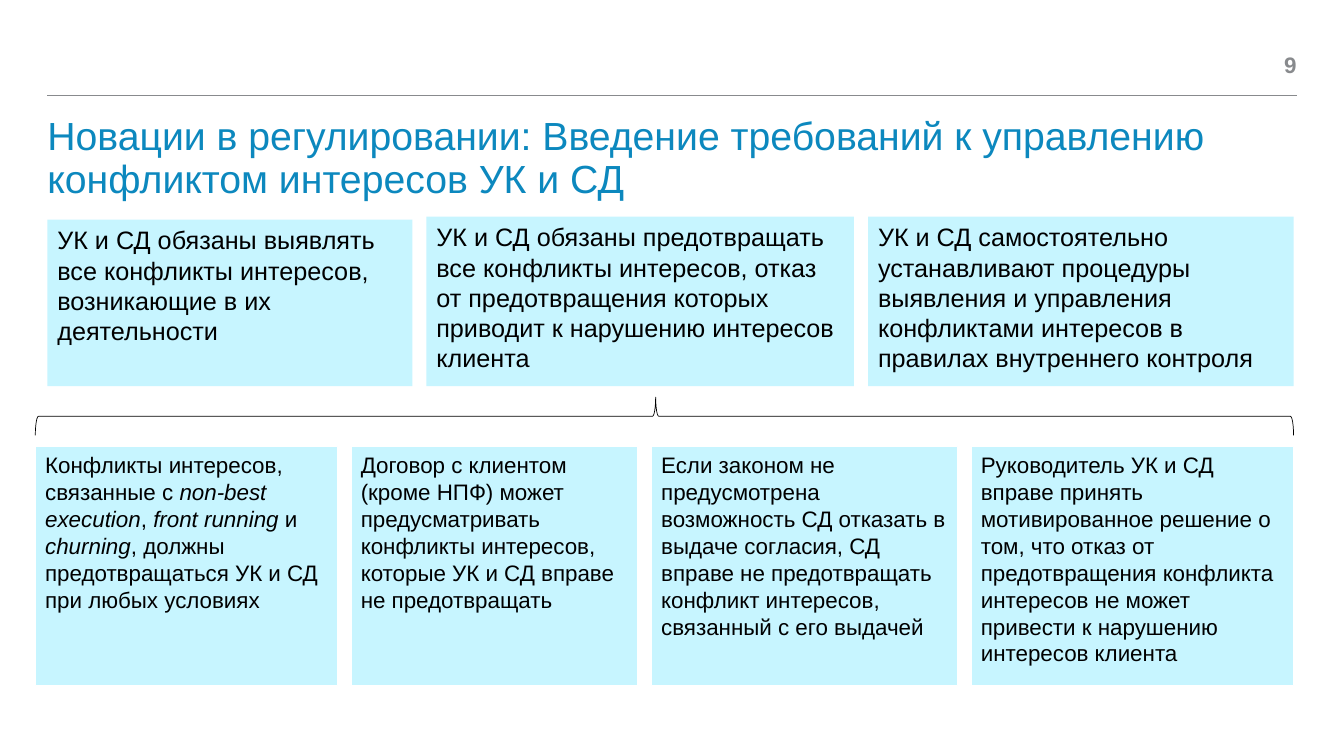
from lxml import etree
from pptx import Presentation
from pptx.dml.color import RGBColor
from pptx.enum.shapes import MSO_CONNECTOR, MSO_SHAPE
from pptx.enum.text import MSO_ANCHOR, PP_ALIGN
from pptx.oxml.ns import qn
from pptx.util import Inches, Pt

STRAIGHT = MSO_CONNECTOR.STRAIGHT
RECTANGLE, LEFT_BRACE = MSO_SHAPE.RECTANGLE, MSO_SHAPE.LEFT_BRACE
TOP, MIDDLE = MSO_ANCHOR.TOP, MSO_ANCHOR.MIDDLE
LEFT, RIGHT = PP_ALIGN.LEFT, PP_ALIGN.RIGHT

FONT = "Arial"
BLACK, WHITE, GRAY = "000000", "FFFFFF", "888A8D"
TITLE_BLUE, CARD_BLUE = "0C88BE", "C7F5FF"

TITLE = ("Новации в регулировании: Введение требований к управлению "
         "конфликтом интересов УК и СД")

# Each card: width, height, runs of (text, italic)
DUTIES = [
    (3.62, 1.65, [("УК и СД обязаны выявлять все конфликты интересов, "
                   "возникающие в их деятельности", False)]),
    (4.24, 1.68, [("УК и СД обязаны предотвращать все конфликты интересов, "
                   "отказ от предотвращения которых приводит к нарушению "
                   "интересов клиента", False)]),
    (4.22, 1.68, [("УК и СД самостоятельно устанавливают процедуры выявления "
                   "и управления конфликтами интересов в правилах "
                   "внутреннего контроля", False)]),
]
CONDITIONS = [
    (3.0, 2.37, [("Конфликты интересов, связанные с ", False),
                 ("non-best execution", True), (", ", False),
                 ("front running ", True), ("и ", False), ("churning", True),
                 (", должны предотвращаться УК и СД при любых условиях", False)]),
    (2.85, 2.37, [("Договор с клиентом (кроме НПФ) может предусматривать "
                   "конфликты интересов, которые УК и СД вправе "
                   "не предотвращать", False)]),
    (3.04, 2.37, [("Если законом не предусмотрена возможность СД отказать в "
                   "выдаче согласия, СД вправе не предотвращать конфликт "
                   "интересов, связанный с его выдачей", False)]),
    (3.2, 2.37, [("Руководитель УК и СД вправе принять мотивированное решение "
                  "о том, что отказ от предотвращения конфликта интересов не "
                  "может привести к нарушению интересов клиента", False)]),
]


def color(value):
    return RGBColor.from_string(value)


def write_runs(shape, runs, size, text_color, anchor=TOP, alignment=LEFT, bold=False):
    frame = shape.text_frame
    frame.word_wrap = True
    frame.vertical_anchor = anchor
    paragraph = frame.paragraphs[0]
    paragraph.alignment = alignment
    for text, italic in runs:
        run = paragraph.add_run()
        run.text = text
        run.font.name = FONT
        run.font.size = Pt(size)
        run.font.bold = bold
        run.font.italic = italic
        run.font.color.rgb = color(text_color)
    return paragraph


def add_label(slide, box, text, size, text_color, **style):
    """Add a text box without margins."""
    label = slide.shapes.add_textbox(*map(Inches, box))
    frame = label.text_frame
    frame.margin_left = frame.margin_right = 0
    frame.margin_top = frame.margin_bottom = 0
    return write_runs(label, [(text, False)], size, text_color, **style)


def add_header(slide, left, top, width):
    add_label(slide, (left + width - 0.81, top, 0.81, 0.35), "9", 16, GRAY,
              anchor=MIDDLE, alignment=RIGHT, bold=True)
    rule_top = Inches(top + 0.48)
    rule = slide.shapes.add_connector(
        STRAIGHT, Inches(left), rule_top, Inches(left + width), rule_top)
    rule.line.color.rgb = color(GRAY)
    rule.line.width = Pt(0.5)
    etree.SubElement(rule._element.spPr, qn("a:effectLst"))
    title = add_label(slide, (left, top + 0.69, width, 0.66), TITLE, 28, TITLE_BLUE)
    title.line_spacing = 0.9


def add_card_row(slide, left, bottom, gap, cards, size, outlined=False):
    """Place cards from left to right, all standing on the same bottom edge."""
    for width, height, runs in cards:
        card = slide.shapes.add_shape(
            RECTANGLE, *map(Inches, (left, bottom - height, width, height)))
        card.shadow.inherit = False
        card.fill.solid()
        card.fill.fore_color.rgb = color(CARD_BLUE)
        if outlined:
            card.line.color.rgb = color(WHITE)
            card.line.width = Pt(1)
        else:
            card.line.fill.background()
        write_runs(card, runs, size, BLACK)
        left += width + gap


def add_upward_brace(slide, left, top, width, height):
    """Turn a left brace a quarter so that it fills the box, tip up."""
    brace_left = left + (width - height) / 2
    brace_top = top + (height - width) / 2
    brace = slide.shapes.add_shape(
        LEFT_BRACE, *map(Inches, (brace_left, brace_top, height, width)))
    brace.rotation = 90
    brace.adjustments[0] = 0.083
    brace.adjustments[1] = 0.507
    brace.shadow.inherit = False
    brace.fill.background()
    brace.line.color.rgb = color(BLACK)
    brace.line.width = Pt(0.5)


def main():
    presentation = Presentation()
    presentation.slide_width = Inches(13.33)
    presentation.slide_height = Inches(7.5)
    slide = presentation.slides.add_slide(presentation.slide_layouts[6])
    add_header(slide, 0.47, 0.47, 12.39)
    add_card_row(slide, 0.47, 3.83, 0.14, DUTIES, 18)
    add_upward_brace(slide, 0.35, 3.94, 12.48, 0.38)
    add_card_row(slide, 0.35, 6.8, 0.13, CONDITIONS, 16, outlined=True)
    presentation.save("out.pptx")


if __name__ == "__main__":
    main()
